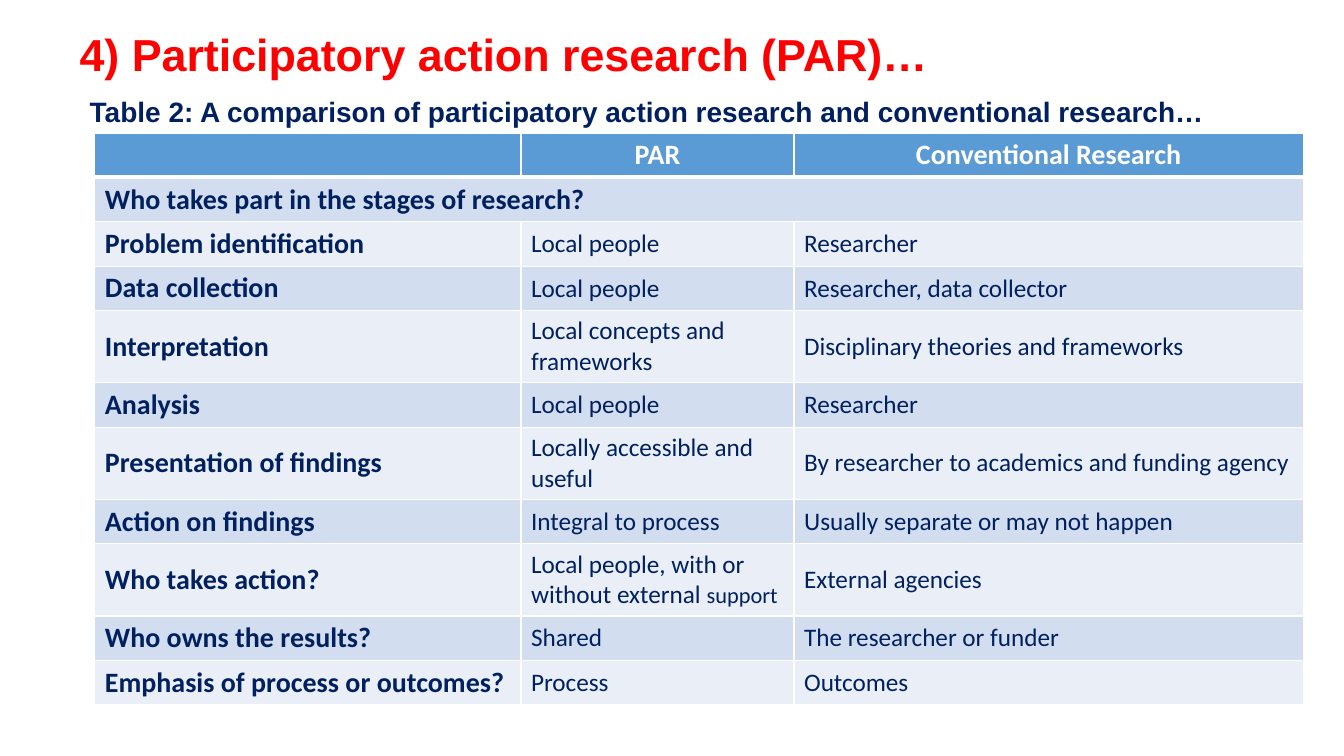
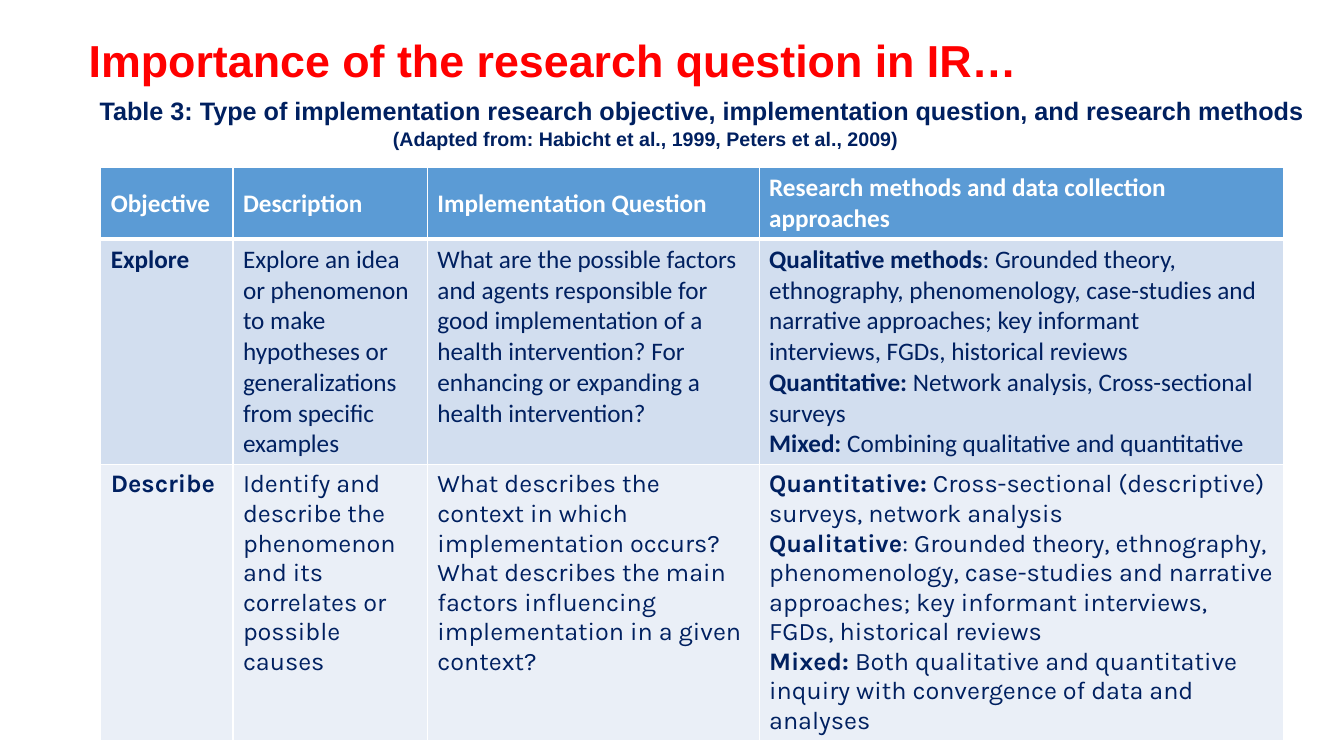
"""Build two slides that each hold a title, a caption and a comparison table."""
from pptx import Presentation
from pptx.dml.color import RGBColor
from pptx.enum.text import MSO_ANCHOR, MSO_AUTO_SIZE, PP_ALIGN
from pptx.util import Cm, Pt
from lxml import etree

TOP, MID = MSO_ANCHOR.TOP, MSO_ANCHOR.MIDDLE
LEFT, CENTER = PP_ALIGN.LEFT, PP_ALIGN.CENTER
NO_FIT = MSO_AUTO_SIZE.NONE
NS = "http://schemas.openxmlformats.org/drawingml/2006/main"

RED, NAVY, WHITE = "FF0000", "002060", "FFFFFF"
BLUE, BANDS = "5B9BD5", ("D2DEEF", "EAEFF7")
BOLD = {"bold": True}

PAR = {
    "title": ("4) Participatory action research (PAR)…", (1.75, 0.61, 26.85, 1.65)),
    "caption": ([("Table 2: A comparison of participatory action research "
                  "and conventional research…", 20, 0)], (2.01, 2.36, 29.26, 1.02)),
    "at": (2.39, 3.35),
    "cols": (10.74, 6.88, 12.83),
    "heights": (1.11, 1.11, 1.11, 1.11, 1.82, 1.11, 1.82, 1.11, 1.82, 1.11, 1.11),
    "label": 20, "align": CENTER, "anchor": MID,
    "fonts": {},
    "rows": [
        ("", "PAR", "Conventional Research"),
        ("Who takes part in the stages of research?",),
        ("Problem identification", "Local people", "Researcher"),
        ("Data collection", "Local people", "Researcher, data collector"),
        ("Interpretation", "Local concepts and frameworks",
         "Disciplinary theories and frameworks"),
        ("Analysis", "Local people", "Researcher"),
        ("Presentation of findings", "Locally accessible and useful",
         "By researcher to academics and funding agency"),
        ("Action on findings", "Integral to process",
         "Usually separate or may not happen"),
        ("Who takes action?",
         [["Local people, with or without external ", ("support", {"size": 16})]],
         "External agencies"),
        ("Who owns the results?", "Shared", "The researcher or funder"),
        ("Emphasis of process or outcomes?", "Process", "Outcomes"),
    ],
}

METHODS = {
    "title": ("Importance of the research question in IR…", (1.98, 0.46, 28.02, 2.26)),
    "caption": ([("Table 3: Type of implementation research objective, "
                  "implementation question, and research methods", 18, 0),
                 ("(Adapted from: Habicht et al., 1999, Peters et al., 2009)", 14, 7.39)],
                (2.26, 2.36, 31.17, 1.5)),
    "at": (2.54, 4.22),
    "cols": (3.33, 4.9, 8.36, 13.21),
    "heights": (1.81, 5.68, 6.95),
    "label": 18, "align": LEFT, "anchor": TOP,
    "fonts": {2: "Karla"},
    "rows": [
        ("Objective", "Description", "Implementation Question",
         "Research methods and data collection approaches"),
        ("Explore",
         "Explore an idea or phenomenon to make hypotheses or generalizations "
         "from specific examples",
         "What are the possible factors and agents responsible for good "
         "implementation of a\nhealth intervention? For enhancing or expanding "
         "a health intervention?",
         [[("Qualitative methods", BOLD),
           ": Grounded theory, ethnography, phenomenology, case-studies and "
           "narrative approaches; key informant\ninterviews, FGDs, historical reviews"],
          [("Quantitative: ", BOLD), "Network analysis, Cross-sectional surveys"],
          [("Mixed: ", BOLD), "Combining qualitative and quantitative"]]),
        ("Describe",
         "Identify and describe the phenomenon and its correlates or possible causes",
         [["What describes the context in which implementation occurs?"],
          ["What describes the main factors influencing implementation "
           "in a given context?"]],
         [[("Quantitative:", BOLD),
           " Cross-sectional (descriptive) surveys, network analysis"],
          [("Qualitative", BOLD),
           ": Grounded theory, ethnography, phenomenology, case-studies and "
           "narrative approaches; key informant interviews, FGDs, historical reviews"],
          [("Mixed:", BOLD),
           " Both qualitative and quantitative inquiry with convergence of data "
           "and analyses"]]),
    ],
}


def paint(hue):
    """Turn a hex string into a colour."""
    return RGBColor.from_string(hue)


def write(para, text, font, size, hue, bold=True):
    """Add a run of text, with line breaks at its newlines."""
    for i, line in enumerate(text.split("\n")):
        if i:
            para.add_line_break()
        run = para.add_run()
        run.text = line
        run.font.name, run.font.size, run.font.bold = font, Pt(size), bold
        run.font.color.rgb = paint(hue)


def place(shape, box):
    """Set the position and size of a shape in centimetres."""
    shape.left, shape.top, shape.width, shape.height = map(Cm, box)


def add_title(slide, text, box):
    """Move and fill the title placeholder."""
    title = slide.shapes.title
    place(title, box)
    frame = title.text_frame
    frame.auto_size, frame.vertical_anchor, frame.word_wrap = NO_FIT, MID, True
    para = frame.paragraphs[0]
    para.alignment, para.line_spacing = LEFT, 0.9
    write(para, text, "Arial", 32, RED)


def add_caption(slide, lines, box):
    """Add the caption above the table."""
    frame = slide.shapes.add_textbox(*map(Cm, box)).text_frame
    frame.word_wrap = True
    for i, (text, size, indent) in enumerate(lines):
        para = frame.add_paragraph() if i else frame.paragraphs[0]
        para.line_spacing = 0.9
        if i:
            para.space_before = Pt(3)
            para._p.get_or_add_pPr().set("marL", str(Cm(indent)))
        write(para, text, "Arial", size, NAVY)


def add_edges(cell, row):
    """Draw white borders, thicker below the header row."""
    props = cell._tc.get_or_add_tcPr()
    wide = {"T": row == 1, "B": row == 0}
    for side in "LRTB":
        width = Pt(3 if wide.get(side) else 1)
        line = etree.SubElement(props, f"{{{NS}}}ln{side}", w=str(width))
        fill = etree.SubElement(line, f"{{{NS}}}solidFill")
        etree.SubElement(fill, f"{{{NS}}}srgbClr", val=WHITE)


def fill_cell(cell, body, base, align):
    """Write paragraphs of plain or styled pieces into a cell."""
    paras = [[body]] if isinstance(body, str) else body
    for i, parts in enumerate(paras):
        para = cell.text_frame.add_paragraph() if i else cell.text_frame.paragraphs[0]
        para.alignment = align
        for part in parts:
            text, style = (part, {}) if isinstance(part, str) else part
            if text:
                write(para, text, **{**base, **style})


def add_grid(slide, page):
    """Add the table with a header row and banded body rows."""
    rows, cols, highs = page["rows"], page["cols"], page["heights"]
    box = (*page["at"], sum(cols), sum(highs))
    grid = slide.shapes.add_table(len(rows), len(cols), *map(Cm, box)).table
    for col, width in zip(grid.columns, cols):
        col.width = Cm(width)
    for r, (row, high) in enumerate(zip(rows, highs)):
        grid.rows[r].height = Cm(high)
        for c in range(len(cols)):
            cell = grid.cell(r, c)
            add_edges(cell, r)
            cell.fill.solid()
            cell.fill.fore_color.rgb = paint(BANDS[(r - 1) % 2] if r else BLUE)
            cell.vertical_anchor = page["anchor"] if r else MID
            if c < len(row):
                lead = r == 0 or c == 0
                base = {"font": page["fonts"].get(r, "Calibri"),
                        "size": page["label"] if lead else 18,
                        "hue": NAVY if r else WHITE, "bold": lead}
                fill_cell(cell, row[c], base, LEFT if r else page["align"])
        if len(row) == 1:
            grid.cell(r, 0).merge(grid.cell(r, len(cols) - 1))


def main():
    """Build and save the deck."""
    deck = Presentation()
    deck.slide_width, deck.slide_height = Cm(33.87), Cm(19.05)
    for page in (PAR, METHODS):
        slide = deck.slides.add_slide(deck.slide_layouts[5])
        add_grid(slide, page)
        add_title(slide, *page["title"])
        add_caption(slide, *page["caption"])
    deck.save("out.pptx")


if __name__ == "__main__":
    main()
